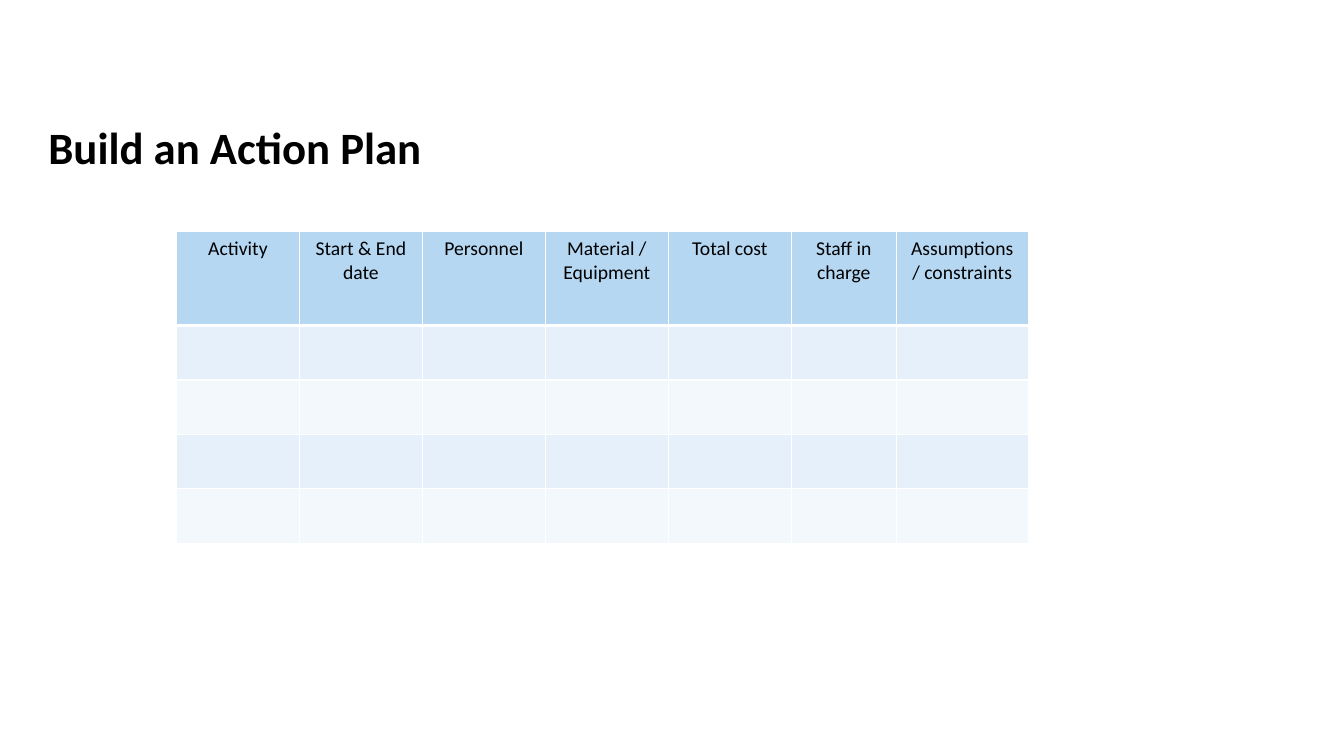
from lxml import etree
from pptx import Presentation
from pptx.dml.color import RGBColor
from pptx.enum.text import MSO_ANCHOR, MSO_AUTO_SIZE, PP_ALIGN
from pptx.oxml.ns import qn
from pptx.util import Inches, Pt

TOP, CENTER, LEFT = MSO_ANCHOR.TOP, PP_ALIGN.CENTER, PP_ALIGN.LEFT
NO_AUTOFIT = MSO_AUTO_SIZE.NONE
BLACK = RGBColor(0x00, 0x00, 0x00)
WHITE = RGBColor(0xFF, 0xFF, 0xFF)
HEADER_BLUE = RGBColor(0xB5, 0xD7, 0xF2)
BAND_BLUES = (RGBColor(0xE5, 0xF0, 0xFA), RGBColor(0xF3, 0xF8, 0xFC))

SLIDE_WIDTH, SLIDE_HEIGHT = Inches(13.33), Inches(7.5)
TITLE_FORMAT = {"name": "Calibri", "size": Pt(32), "bold": True}
HEADER_FORMAT = {"name": "Calibri", "size": Pt(14), "bold": False}
TITLE_FRAME = {"word_wrap": True, "auto_size": NO_AUTOFIT, "vertical_anchor": TOP,
               "margin_left": Inches(0.1), "margin_right": Inches(0.1),
               "margin_top": Inches(0.05), "margin_bottom": Inches(0.05)}

PLAN_COLUMNS = {
    "Activity": 1.22,
    "Start & End date": 1.22,
    "Personnel": 1.22,
    "Material / Equipment": 1.22,
    "Total cost": 1.22,
    "Staff in charge": 1.04,
    "Assumptions / constraints": 1.31,
}
HEADER_HEIGHT, ACTIVITY_HEIGHT, ACTIVITY_COUNT = Inches(0.93), Inches(0.54), 4


def apply_format(target, values):
    """Set every attribute in values on the target."""
    for attribute, value in values.items():
        setattr(target, attribute, value)


def format_paragraph(paragraph, font_format, alignment):
    """Give a paragraph its alignment and black lettering."""
    paragraph.alignment = alignment
    apply_format(paragraph.font, font_format)
    paragraph.font.color.rgb = BLACK


def add_title(slide, heading):
    """Place and format the title placeholder."""
    title = slide.shapes.title
    apply_format(title, {"left": int(SLIDE_WIDTH * 0.0285), "top": int(SLIDE_HEIGHT * 0.16),
                         "width": int(SLIDE_WIDTH * 0.584), "height": int(SLIDE_HEIGHT * 0.063)})
    title.text = heading
    apply_format(title.text_frame, TITLE_FRAME)
    paragraph = title.text_frame.paragraphs[0]
    paragraph.line_spacing = 0.9
    format_paragraph(paragraph, TITLE_FORMAT, LEFT)


def style_cell(cell, color, bottom_points):
    """Give a cell white borders and a solid fill."""
    properties = cell._tc.get_or_add_tcPr()
    for edge, points in (("L", 1), ("R", 1), ("T", 1), ("B", bottom_points)):
        border = etree.SubElement(properties, qn(f"a:ln{edge}"), w=str(Pt(points)))
        border_fill = etree.SubElement(border, qn("a:solidFill"))
        etree.SubElement(border_fill, qn("a:srgbClr"), val=str(WHITE))
    cell.fill.solid()
    cell.fill.fore_color.rgb = color


def add_plan_table(slide):
    """Add the action plan with a header and banded empty rows."""
    plan = slide.shapes.add_table(
        ACTIVITY_COUNT + 1, len(PLAN_COLUMNS),
        int(SLIDE_WIDTH * 0.1313), int(SLIDE_HEIGHT * 0.3067),
        Inches(sum(PLAN_COLUMNS.values())),
        HEADER_HEIGHT + ACTIVITY_COUNT * ACTIVITY_HEIGHT).table
    for column, width in zip(plan.columns, PLAN_COLUMNS.values()):
        column.width = Inches(width)
    for index, row in enumerate(plan.rows):
        is_header = index == 0
        row.height = HEADER_HEIGHT if is_header else ACTIVITY_HEIGHT
        color = HEADER_BLUE if is_header else BAND_BLUES[(index - 1) % 2]
        for cell in row.cells:
            style_cell(cell, color, 3 if is_header else 1)
    for cell, label in zip(plan.rows[0].cells, PLAN_COLUMNS):
        cell.text = label
        format_paragraph(cell.text_frame.paragraphs[0], HEADER_FORMAT, CENTER)


def main():
    """Build the action plan slide and save it."""
    presentation = Presentation()
    apply_format(presentation, {"slide_width": SLIDE_WIDTH, "slide_height": SLIDE_HEIGHT})
    slide = presentation.slides.add_slide(presentation.slide_layouts[5])
    add_plan_table(slide)
    add_title(slide, "Build an Action Plan")
    presentation.save("out.pptx")


if __name__ == "__main__":
    main()
